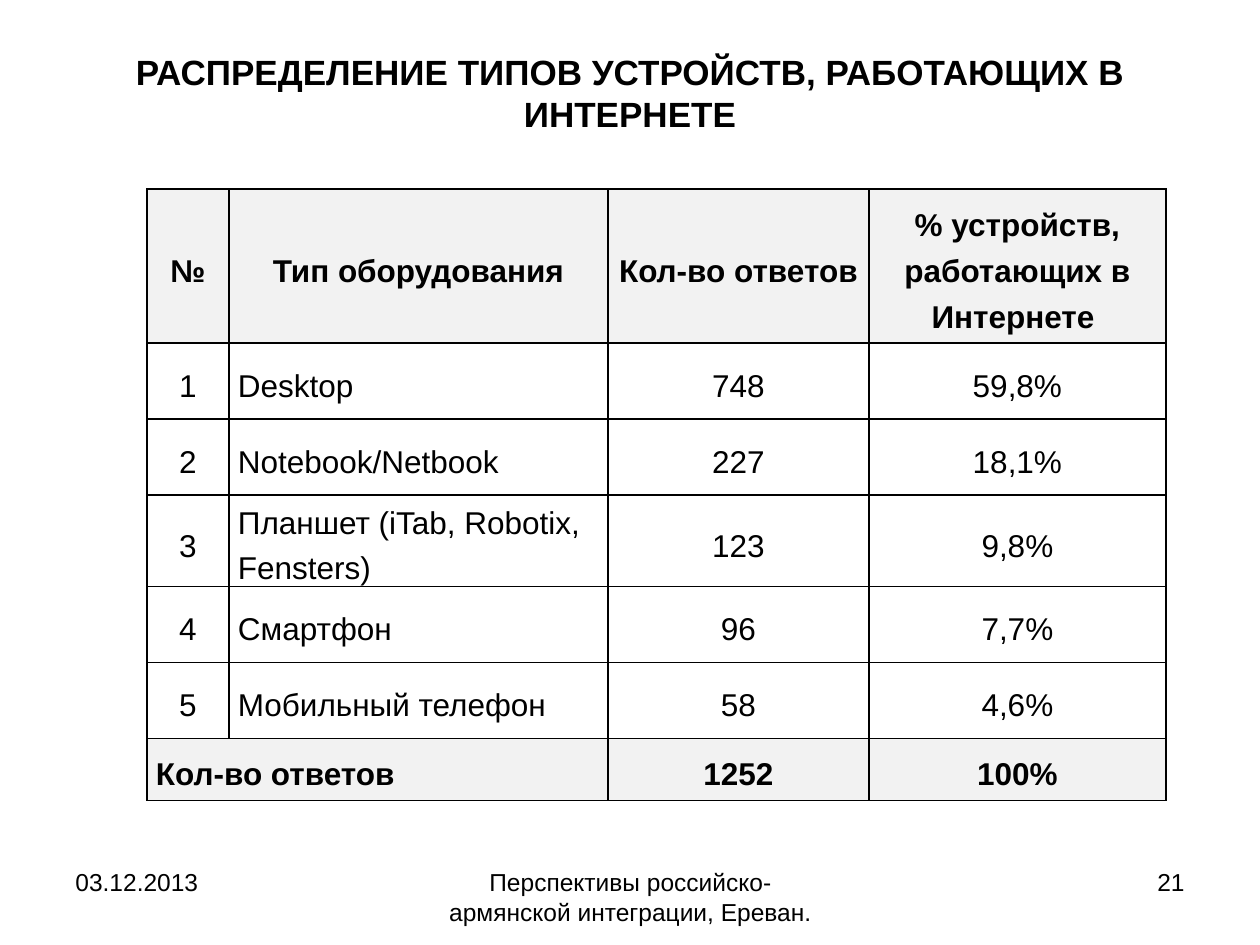
"""Build the slide on device types that work on the Internet."""
from lxml import etree
from pptx import Presentation
from pptx.dml.color import RGBColor
from pptx.enum.text import MSO_ANCHOR, MSO_AUTO_SIZE, PP_ALIGN
from pptx.oxml.ns import qn
from pptx.util import Pt

LEFT, MID, RIGHT = PP_ALIGN.LEFT, PP_ALIGN.CENTER, PP_ALIGN.RIGHT
PX = 914400 // 126
BLACK, GREY = "000000", "F2F2F2"


def write(frame, text, size=18, bold=False, align=LEFT, space=None):
    frame.word_wrap = True
    par = frame.paragraphs[0]
    par.alignment = align
    par.line_spacing = space
    run = par.add_run()
    run.text = text
    run.font.name = "Arial"
    run.font.size = Pt(size)
    run.font.bold = bold
    run.font.color.rgb = RGBColor.from_string(BLACK)


def frame_cell(cell):
    props = cell._tc.get_or_add_tcPr()
    for i, side in enumerate(("lnL", "lnR", "lnT", "lnB")):
        line = etree.Element(qn("a:" + side), w=str(Pt(1)))
        fill = etree.SubElement(line, qn("a:solidFill"))
        etree.SubElement(fill, qn("a:srgbClr"), val=BLACK)
        props.insert(i, line)


deck = Presentation()
deck.slide_width, deck.slide_height = 1260 * PX, 945 * PX
slide = deck.slides.add_slide(deck.slide_layouts[5])

title = slide.shapes.title
title.left, title.top, title.width, title.height = (
    n * PX for n in (63, 38, 1134, 157))
frame = title.text_frame
frame.auto_size = MSO_AUTO_SIZE.NONE
frame.vertical_anchor = MSO_ANCHOR.MIDDLE
frame.margin_bottom = 54 * PX
write(frame, "РАСПРЕДЕЛЕНИЕ ТИПОВ УСТРОЙСТВ, РАБОТАЮЩИХ В ИНТЕРНЕТЕ",
      size=20, bold=True, align=MID)

rows = [
    ("№", "Тип оборудования", "Кол-во ответов ",
     "% устройств, работающих в Интернете "),
    ("1", "Desktop", "748", "59,8%"),
    ("2", "Notebook/Netbook", "227", "18,1%"),
    ("3", "Планшет (iTab, Robotix, Fensters)", "123", "9,8%"),
    ("4", "Смартфон", "96", "7,7%"),
    ("5", "Мобильный телефон", "58", "4,6%"),
    ("Кол-во ответов", "", "1252", "100%"),
]
widths = (82, 379, 261, 297)
heights = (154, 76, 76, 79, 76, 76, 62)
last = len(rows) - 1

table = slide.shapes.add_table(
    len(rows), len(widths), 147 * PX, 189 * PX,
    sum(widths) * PX, sum(heights) * PX).table
table.first_row = table.horz_banding = False
for col, width in zip(table.columns, widths):
    col.width = width * PX
for row, height in zip(table.rows, heights):
    row.height = height * PX
table.cell(last, 0).merge(table.cell(last, 1))

for r, row in enumerate(rows):
    strong = r in (0, last)
    for c, text in enumerate(row):
        cell = table.cell(r, c)
        cell.vertical_anchor = MSO_ANCHOR.MIDDLE
        cell.margin_left = cell.margin_right = 9 * PX
        cell.margin_top = cell.margin_bottom = 0
        if strong:
            cell.fill.solid()
            cell.fill.fore_color.rgb = RGBColor.from_string(GREY)
        else:
            cell.fill.background()
        frame_cell(cell)
        if text:
            left = (c == 1 and r > 0) or (c == 0 and r == last)
            write(cell.text_frame, text, bold=strong,
                  align=LEFT if left else MID, space=1.3)

foot = (
    (63, 294, LEFT, "03.12.2013"),
    (431, 399, MID, "Перспективы российско-армянской интеграции, Ереван."),
    (903, 294, RIGHT, "21"),
)
for x, width, align, text in foot:
    box = slide.shapes.add_textbox(x * PX, 861 * PX, width * PX, 66 * PX)
    write(box.text_frame, text, size=14, align=align)

deck.save("out.pptx")
